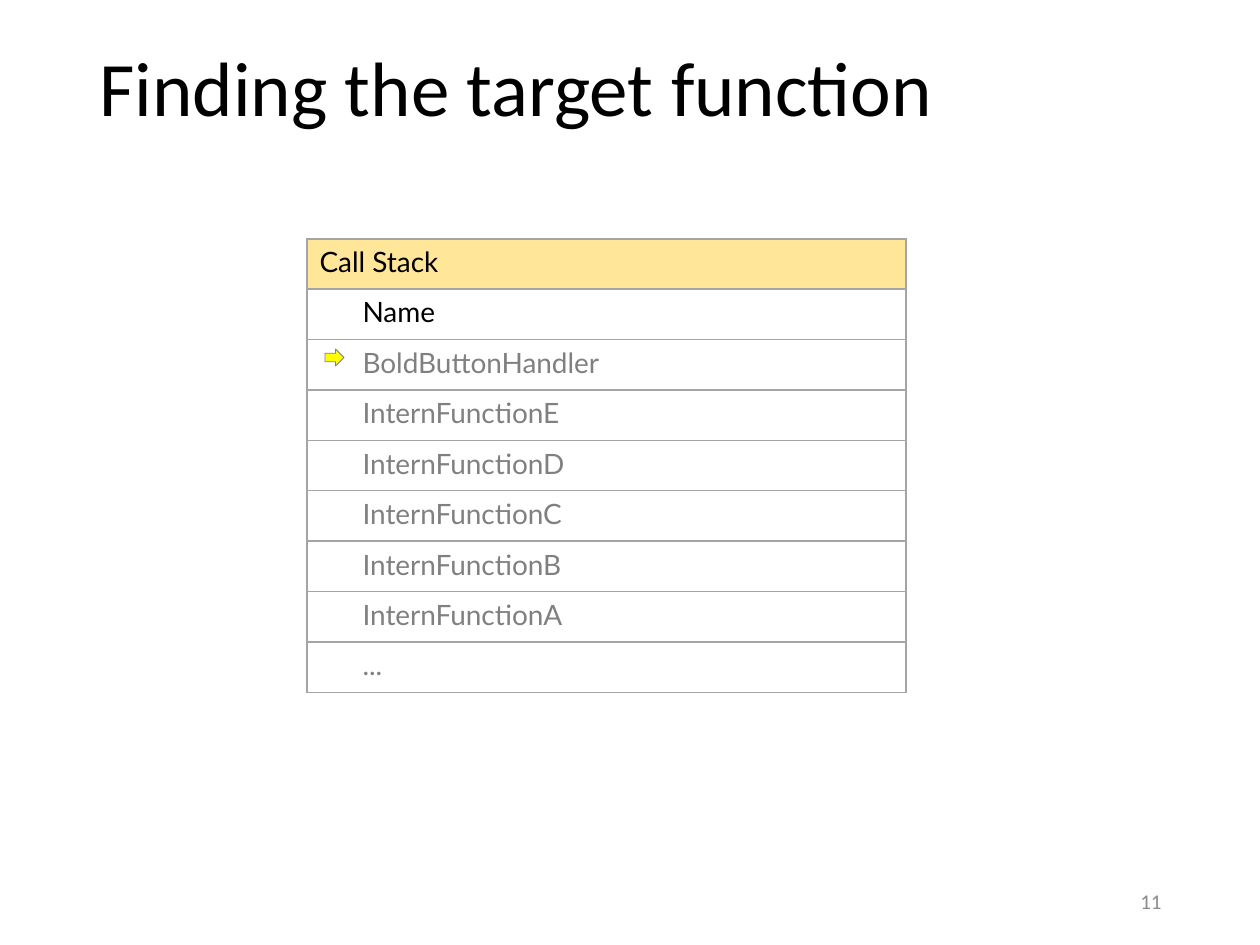
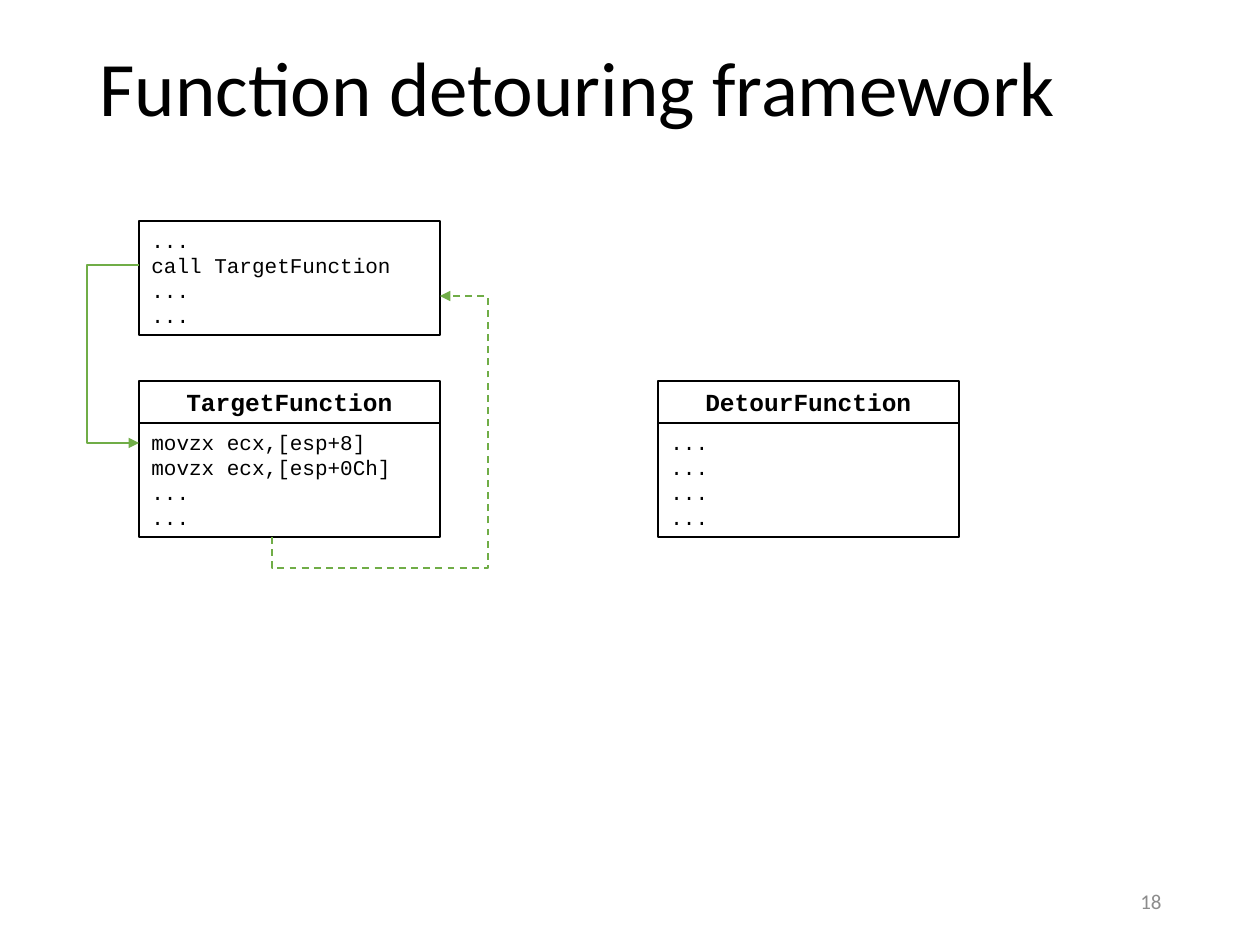
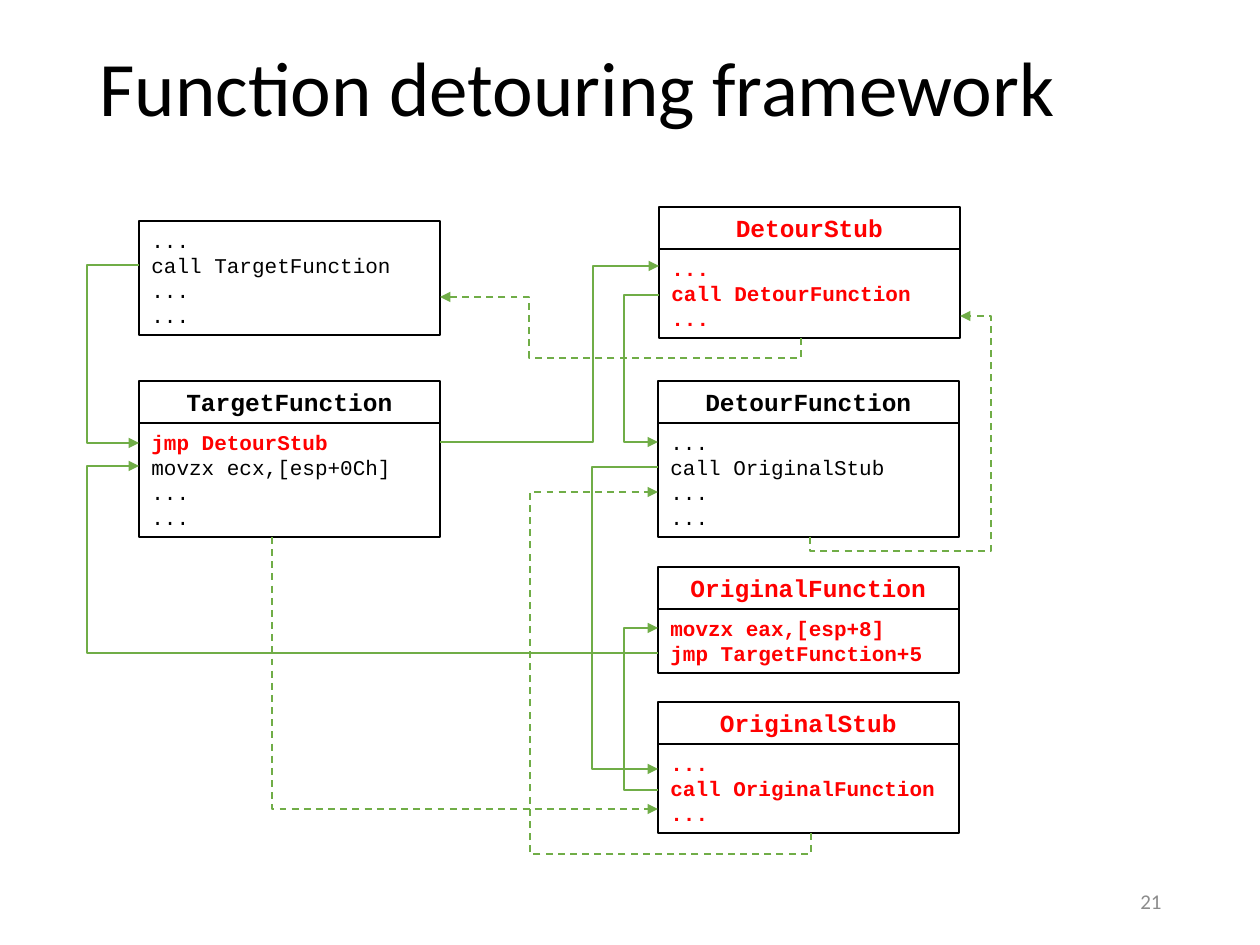
"""Build three slides on finding and detouring a target function."""
from dataclasses import dataclass

from lxml import etree
from pptx import Presentation
from pptx.dml.color import RGBColor
from pptx.enum.dml import MSO_LINE
from pptx.enum.shapes import MSO_SHAPE
from pptx.enum.text import MSO_ANCHOR, PP_ALIGN
from pptx.oxml.ns import qn
from pptx.util import Pt

EMU_PER_PX = 914400 / 126
LEFT, CENTER, RIGHT = PP_ALIGN.LEFT, PP_ALIGN.CENTER, PP_ALIGN.RIGHT
TOP, MIDDLE = MSO_ANCHOR.TOP, MSO_ANCHOR.MIDDLE
RECTANGLE, RIGHT_ARROW = MSO_SHAPE.RECTANGLE, MSO_SHAPE.RIGHT_ARROW
DASH = MSO_LINE.DASH

BLACK, WHITE, RED = "000000", "FFFFFF", "FF0000"
GRAY, BORDER_GRAY, NUMBER_GRAY = "808080", "A5A5A5", "8C8C8C"
GREEN, YELLOW, HEADER_FILL = "70AD47", "FFFF00", "FFE699"
TITLE_FONT, CODE_FONT, TABLE_FONT = "Calibri", "Courier New", "Lato"

TITLE_BOX = (87, 0, 1086, 183)
NUMBER_BOX = (890, 876, 284, 50)
STACK_BOX = (307, 239, 599, 450)
MARKER_COLUMN = 43
BLOCK_WIDTH, HEADER_HEIGHT, LINE_HEIGHT, BODY_PADDING = 301, 42, 25, 14
CALL_STACK = ["BoldButtonHandler"] + [f"InternFunction{letter}" for letter in "EDCBA"] + ["..."]


@dataclass
class Block:
    """A code box with an optional title; its first red_lines lines are red."""
    left: int
    top: int
    title: str
    lines: list
    red_lines: int = 0

    @property
    def header_height(self):
        """Return the height of the title band."""
        return HEADER_HEIGHT if self.title else 0

    @property
    def body_height(self):
        """Return the height of the code area."""
        return BODY_PADDING + LINE_HEIGHT * len(self.lines)

    @property
    def bottom(self):
        """Return the lower edge."""
        return self.top + self.header_height + self.body_height

    def edge(self, lane):
        """Return the side that faces a vertical lane."""
        return self.left if lane < self.left else self.left + BLOCK_WIDTH


CALLER = Block(139, 221, "", ["...", "call TargetFunction", "...", "..."])


def px(length):
    """Turn pixels into EMU."""
    return round(length * EMU_PER_PX)


def color(value):
    """Turn a hex string into a colour."""
    return RGBColor.from_string(value)


def write_text(frame, lines, *, font, size, colors=(BLACK,), bold=(False,),
               align=LEFT, anchor=TOP, spacing=None):
    """Write lines into a text frame; the last colour and weight carry on."""
    frame.word_wrap = True
    frame.vertical_anchor = anchor
    for index, line in enumerate(lines):
        paragraph = frame.add_paragraph() if index else frame.paragraphs[0]
        paragraph.alignment = align
        if spacing:
            paragraph.line_spacing = spacing
        run = paragraph.add_run()
        run.text = line
        run.font.name = font
        run.font.size = Pt(size)
        run.font.bold = bold[min(index, len(bold) - 1)]
        run.font.color.rgb = color(colors[min(index, len(colors) - 1)])


def add_text(slide, box, text, **text_format):
    """Add a text box with one line."""
    shape = slide.shapes.add_textbox(*map(px, box))
    write_text(shape.text_frame, [text], anchor=MIDDLE, **text_format)


def add_slide(presentation, title, number):
    """Add a slide with its title and number."""
    slide = presentation.slides.add_slide(presentation.slide_layouts[6])
    add_text(slide, TITLE_BOX, title, font=TITLE_FONT, size=44, spacing=0.9)
    add_text(slide, NUMBER_BOX, number, font=TITLE_FONT, size=12,
             colors=(NUMBER_GRAY,), align=RIGHT)
    return slide


def style_shape(shape, line, width, fill=None):
    """Give a shape its outline and fill, without a shadow."""
    shape.shadow.inherit = False
    shape.line.color.rgb = color(line)
    shape.line.width = Pt(width)
    if fill:
        shape.fill.solid()
        shape.fill.fore_color.rgb = color(fill)
    else:
        shape.fill.background()


def style_cell(cell, fill, sides):
    """Fill a cell and draw borders on the named sides only."""
    properties = cell._tc.get_or_add_tcPr()
    for side in "LRTB":
        line = etree.SubElement(properties, qn(f"a:ln{side}"), w=str(Pt(1)))
        if side in sides:
            paint = etree.SubElement(line, qn("a:solidFill"))
            etree.SubElement(paint, qn("a:srgbClr"), val=BORDER_GRAY)
        else:
            etree.SubElement(line, qn("a:noFill"))
    cell.fill.solid()
    cell.fill.fore_color.rgb = color(fill)


def add_call_stack(slide, box, functions):
    """Add the call stack table and the marker of the current function."""
    left, top, width, height = box
    names = ["Name"] + functions
    row_count = len(names) + 1
    row_height = height // row_count
    table = slide.shapes.add_table(row_count, 2, *map(px, box)).table
    table.first_row = table.horz_banding = False
    table.columns[0].width = px(MARKER_COLUMN)
    table.columns[1].width = px(width - MARKER_COLUMN)
    for row in table.rows:
        row.height = px(row_height)
    header = table.cell(0, 0)
    header.merge(table.cell(0, 1))
    for cell in table.rows[0].cells:
        style_cell(cell, HEADER_FILL, "LRTB")
    write_text(header.text_frame, ["Call Stack"], font=TABLE_FONT, size=16)
    for index, name in enumerate(names, 1):
        marker, cell = table.rows[index].cells
        style_cell(marker, WHITE, "LTB")
        style_cell(cell, WHITE, "RTB")
        write_text(cell.text_frame, [name], font=TABLE_FONT, size=16,
                   colors=(BLACK if index == 1 else GRAY,))
    arrow = slide.shapes.add_shape(
        RIGHT_ARROW, px(left + 18), px(top + 2 * row_height + 10), px(19), px(17))
    style_shape(arrow, GRAY, 0.5, YELLOW)


def add_rectangle(slide, box, lines, **text_format):
    """Add an outlined rectangle of code text."""
    shape = slide.shapes.add_shape(RECTANGLE, *map(px, box))
    style_shape(shape, BLACK, 1)
    write_text(shape.text_frame, lines, font=CODE_FONT, **text_format)


def add_block(slide, block):
    """Add a code block and its title band."""
    red = block.red_lines
    body = (block.left, block.top + block.header_height, BLOCK_WIDTH, block.body_height)
    add_rectangle(slide, body, block.lines, size=12,
                  colors=[RED] * red + [BLACK], bold=[True] * red + [False])
    if block.title:
        header = (block.left, block.top, BLOCK_WIDTH, HEADER_HEIGHT)
        add_rectangle(slide, header, [block.title], size=14, bold=(True,), align=CENTER,
                      colors=(RED if red == len(block.lines) else BLACK,))


def add_route(slide, points, dashed=False):
    """Draw an open path that ends in an arrowhead."""
    builder = slide.shapes.build_freeform(*points[0], scale=EMU_PER_PX)
    builder.add_line_segments(points[1:], close=False)
    shape = builder.convert_to_shape()
    style_shape(shape, GREEN, 1)
    if dashed:
        shape.line.dash_style = DASH
    outline = shape._element.spPr.find(qn("a:ln"))
    etree.SubElement(outline, qn("a:tailEnd"), type="triangle")


def add_call(slide, source, exit_offset, target, entry_offset, lane):
    """Draw a call from the side of one block to the side of another."""
    start, end = source.top + exit_offset, target.top + entry_offset
    add_route(slide, [(source.edge(lane), start), (lane, start),
                      (lane, end), (target.edge(lane), end)])


def add_return(slide, source, exit_offset, target, entry_offset, lane, drop=0):
    """Draw a dashed return from below one block to the side of another."""
    start, end = source.left + exit_offset, target.top + entry_offset
    points = [(start, source.bottom)]
    if drop:
        points += [(start, source.bottom + drop), (lane, source.bottom + drop)]
    points += [(lane, end), (target.edge(lane), end)]
    add_route(slide, points, dashed=True)


def build_stack_slide(presentation):
    """Build the call stack slide."""
    slide = add_slide(presentation, "Finding the target function", "11")
    add_call_stack(slide, STACK_BOX, CALL_STACK)


def build_detour_slide(presentation, number, blocks, calls, returns):
    """Build a slide of code blocks joined by calls and returns."""
    slide = add_slide(presentation, "Function detouring framework", number)
    for block in blocks:
        add_block(slide, block)
    for call in calls:
        add_call(slide, *call)
    for route in returns:
        add_return(slide, *route)


def build_before_detour(presentation):
    """Build the slide with the plain call."""
    target = Block(139, 381, "TargetFunction",
                   ["movzx ecx,[esp+8]", "movzx ecx,[esp+0Ch]", "...", "..."])
    detour = Block(658, 381, "DetourFunction", ["..."] * 4)
    build_detour_slide(presentation, "18", [CALLER, target, detour],
                       calls=[(CALLER, 44, target, 62, 87)],
                       returns=[(target, 133, CALLER, 75, 488, 31)])


def build_after_detour(presentation):
    """Build the slide with the detoured call."""
    target = Block(139, 381, "TargetFunction",
                   ["jmp DetourStub", "movzx ecx,[esp+0Ch]", "...", "..."], 1)
    detour_stub = Block(659, 207, "DetourStub", ["...", "call DetourFunction", "..."], 3)
    detour = Block(658, 381, "DetourFunction", ["...", "call OriginalStub", "...", "..."])
    original = Block(658, 567, "OriginalFunction",
                     ["movzx eax,[esp+8]", "jmp TargetFunction+5"], 2)
    original_stub = Block(658, 702, "OriginalStub",
                          ["...", "call OriginalFunction", "..."], 3)
    build_detour_slide(
        presentation, "21",
        [CALLER, target, detour_stub, detour, original, original_stub],
        calls=[
            (CALLER, 44, target, 62, 87),
            (target, 61, detour_stub, 59, 593),
            (detour_stub, 88, detour, 61, 624),
            (detour, 86, original_stub, 67, 592),
            (original_stub, 88, original, 61, 624),
            (original, 86, target, 85, 87),
        ],
        returns=[
            (target, 133, original_stub, 107, 272),
            (original_stub, 153, detour, 111, 530, 21),
            (detour, 152, detour_stub, 109, 991, 14),
            (detour_stub, 142, CALLER, 76, 529, 20),
        ])


def main():
    """Build and save the presentation."""
    presentation = Presentation()
    presentation.slide_width = px(1260)
    presentation.slide_height = px(945)
    build_stack_slide(presentation)
    build_before_detour(presentation)
    build_after_detour(presentation)
    presentation.save("out.pptx")


if __name__ == "__main__":
    main()
